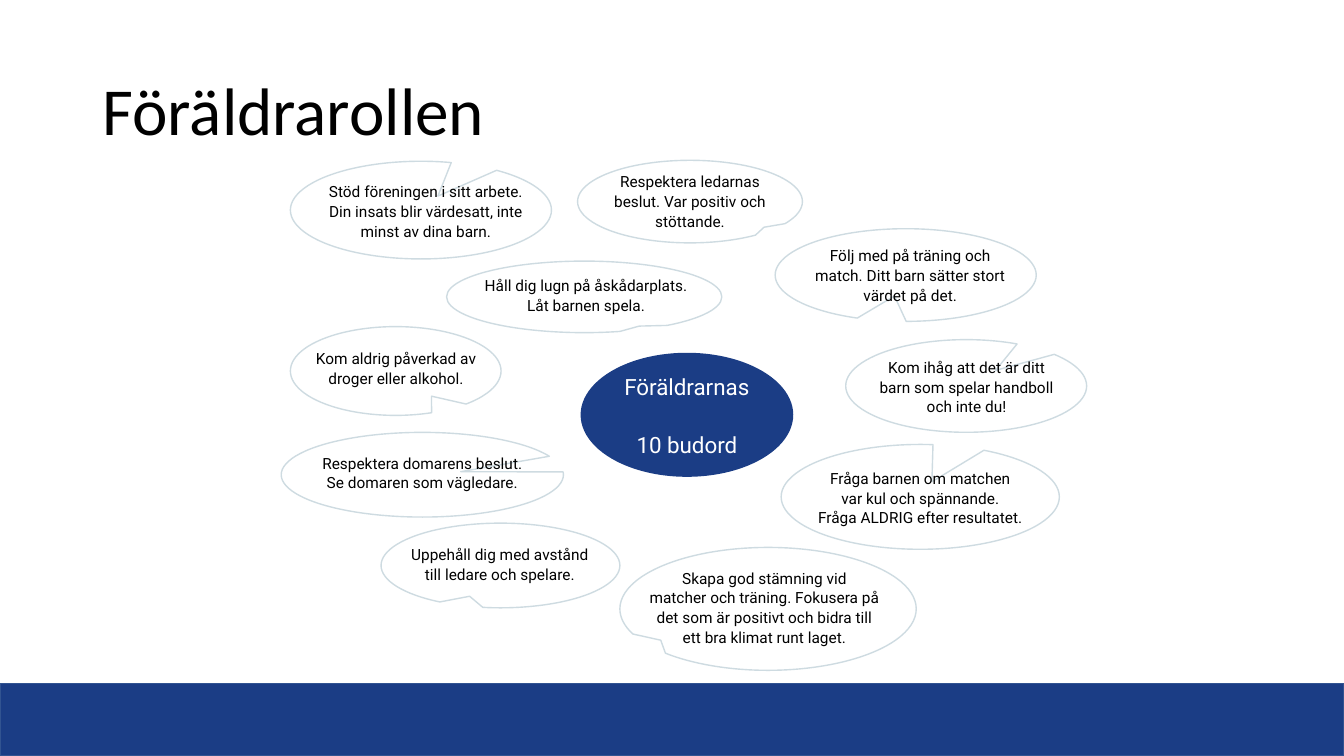
from pptx import Presentation
from pptx.dml.color import RGBColor
from pptx.enum.shapes import MSO_SHAPE as Preset
from pptx.enum.text import MSO_ANCHOR as Anchor, PP_ALIGN as Align
from pptx.util import Pt

BLUE, EDGE, OUTLINE = "1B3D85", "325491", "CEDBE1"
BLACK, WHITE = "000000", "FFFFFF"

TITLE = "Föräldrarollen"
CENTRE = "Föräldrarnas\n10 budord"
FOOTER_BOX = (0, 488.2, 960, 51.8)
TITLE_BOX = (66.2, 28.8, 785.5, 104.4)
CENTRE_BOX = (414.7, 252, 151.9, 88.6)

# rule, bubble box, bubble tip, text box
RULES = [
    ("Följ med på träning och match. Ditt barn sätter stort värdet på det.",
     (553.7, 163.4, 186.5, 66.2), (-0.043, 0.226), (571.7, 171.4, 157, 44.6)),
    ("Uppehåll dig med avstånd till ledare och spelare.",
     (272.2, 373.7, 170.6, 60.5), (-0.129, 0.364), (284.4, 385.2, 145.4, 44.6)),
    ("Håll dig lugn på åskådarplats. Låt barnen spela.",
     (319, 186.5, 196.6, 51.1), (0.2, 0.409), (334.1, 193, 169.2, 44.6)),
    ("Respektera ledarnas beslut. Var positiv och stöttande.",
     (412.6, 114.5, 160.6, 59), (0.329, 0.311), (423.4, 118.8, 139, 44.6)),
    ("Respektera domarens beslut. Se domaren som vägledare.",
     (200.9, 308.9, 201.6, 60.5), (0.136, -0.036), (221.8, 319.7, 159.8, 44.6)),
    ("Fråga barnen om matchen\vvar kul och spännande.\vFråga ALDRIG efter resultatet.",
     (558, 317.5, 198.7, 74.9), (0.042, -0.144), (568.1, 330.5, 178.6, 44.6)),
    ("Kom ihåg att det är ditt\vbarn som spelar handboll\voch inte du!",
     (604.1, 242.6, 172.1, 66.2), (0.122, -0.168), (589.7, 251.3, 201.6, 61.9)),
    ("Stöd föreningen i sitt arbete.\vDin insats blir värdesatt, inte minst av dina barn.",
     (207.4, 115.2, 186.5, 69.8), (0.065, -0.143), (221.8, 126, 164.9, 52.6)),
    ("Kom aldrig påverkad av droger eller alkohol.",
     (207.4, 233.3, 150.5, 63.4), (0.17, 0.284), (216.7, 244.8, 132.5, 39.6)),
    ("Skapa god stämning vid\vmatcher och träning. Fokusera på det som är positivt "
     "och bidra till ett bra klimat runt laget.",
     (442.8, 391, 211.7, 87.8), (-0.362, 0.255), (455, 401.8, 182.2, 82.1)),
]


def colour(value):
    return RGBColor.from_string(value)


def add_shape(preset, box, fill=None, line=None):
    shape = slide.shapes.add_shape(preset, *map(Pt, box))
    shape.shadow.inherit = False
    if fill:
        shape.fill.solid()
        shape.fill.fore_color.rgb = colour(fill)
    else:
        shape.fill.background()
    if line:
        shape.line.color.rgb = colour(line)
        shape.line.width = Pt(1)
    else:
        shape.line.fill.background()
    return shape


def write(shape, text, font, size, ink, align, anchor, spacing, gap=0):
    frame = shape.text_frame
    frame.word_wrap = True
    frame.vertical_anchor = anchor
    frame.text = text
    for index, paragraph in enumerate(frame.paragraphs):
        paragraph.alignment = align
        paragraph.line_spacing = spacing
        if index:
            paragraph.space_before = Pt(gap)
        for run in paragraph.runs:
            run.font.name = font
            run.font.size = Pt(size)
            run.font.color.rgb = colour(ink)


def add_text(box, *style):
    write(slide.shapes.add_textbox(*map(Pt, box)), *style)


presentation = Presentation()
presentation.slide_width, presentation.slide_height = Pt(960), Pt(540)
slide = presentation.slides.add_slide(presentation.slide_layouts[6])

add_shape(Preset.RECTANGLE, FOOTER_BOX, BLUE, EDGE)
add_text(TITLE_BOX, TITLE, "Calibri", 48, BLACK, Align.LEFT, Anchor.MIDDLE, 0.9)

centre = add_shape(Preset.OVAL, CENTRE_BOX, BLUE)
write(centre, CENTRE, "Roboto", 16, WHITE, Align.CENTER, Anchor.MIDDLE, 1.07, 21)

for rule, bubble_box, tip, text_box in RULES:
    bubble = add_shape(Preset.OVAL_CALLOUT, bubble_box, line=OUTLINE)
    bubble.adjustments[0], bubble.adjustments[1] = tip
    add_text(text_box, rule, "Roboto", 11, BLACK, Align.CENTER, Anchor.TOP, 1.07)

presentation.save("out.pptx")
